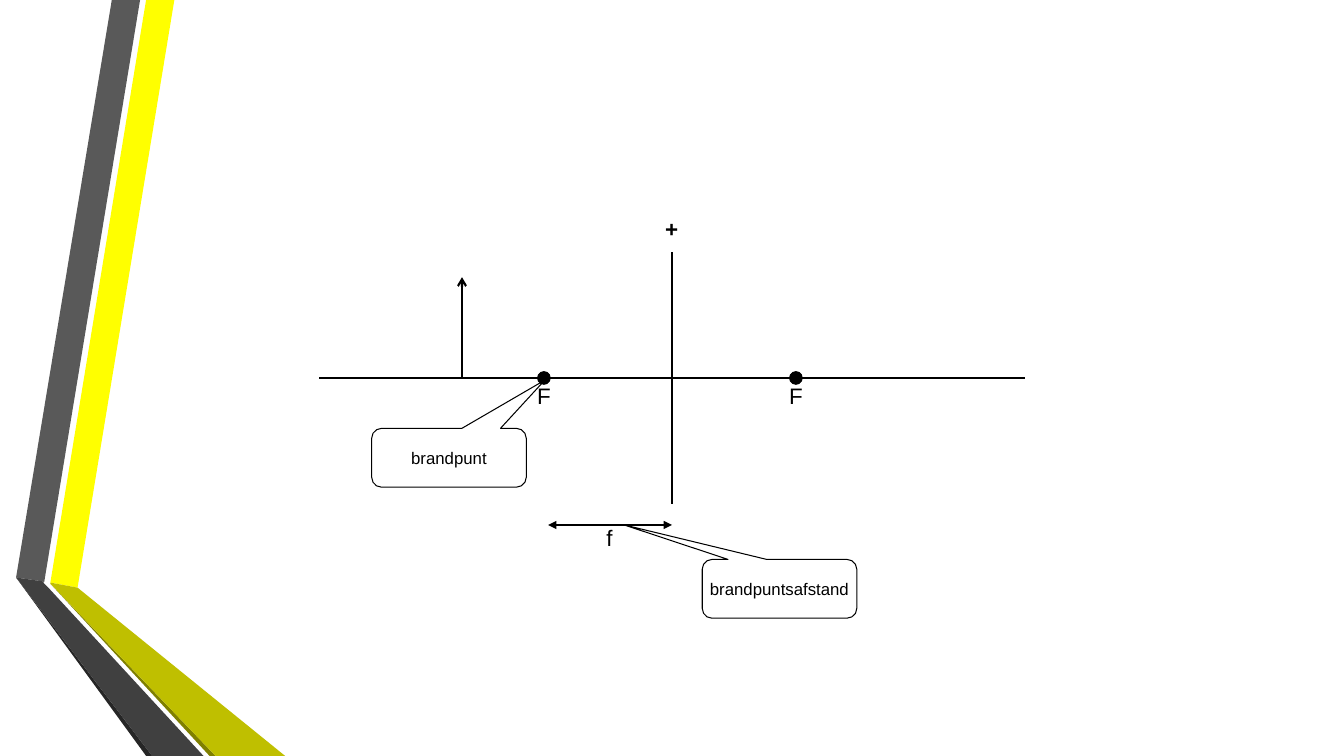
import pptx
import pptx.util
import pptx.dml.color
import pptx.enum.shapes
import pptx.enum.text
import pptx.oxml.ns
import lxml.etree

RGB = pptx.dml.color.RGBColor
BLACK = RGB(0x00, 0x00, 0x00)
YELLOW = RGB(0xFF, 0xFF, 0x00)
OLIVE = RGB(0xBF, 0xBF, 0x00)
MOSS = RGB(0x7F, 0x80, 0x00)
GREY = RGB(0x59, 0x59, 0x59)
DARK = RGB(0x40, 0x40, 0x40)
COAL = RGB(0x26, 0x26, 0x26)

KIND = pptx.enum.shapes.MSO_SHAPE
ANCHOR = pptx.enum.text.MSO_ANCHOR
ALIGN = pptx.enum.text.PP_ALIGN
SIZING = pptx.enum.text.MSO_AUTO_SIZE
LABEL = {"name": "Arial", "size": pptx.util.Pt(16), "bold": False}
NOTE = LABEL | {"size": pptx.util.Pt(12)}

WIDE, HIGH = pptx.util.Inches(13.333), pptx.util.Inches(7.5)
COLS, ROWS = 160, 90
CELL = HIGH / ROWS
POINT = HIGH / 750

BANDS = [
    (YELLOW, [(50, 578), (77, 583), (173, 0), (145, 0)]),
    (GREY, [(139, 0), (111, 0), (16, 573), (44, 577)]),
    (COAL, [(16, 573), (145, 750), (151, 750)]),
    (MOSS, [(50, 579), (208, 750), (214, 750)]),
    (OLIVE, [(50, 579), (214, 750), (283, 750), (77, 583), (50, 578)]),
    (DARK, [(202, 750), (48, 583), (43, 578), (44, 577), (16, 573), (151, 750)]),
]


def style(item, values):
    for name, value in values.items():
        setattr(item, name, value)


def place(box, x, y):
    return round((box[0] + x) * CELL), round((box[1] + y) * CELL)


def span(wide, high):
    return round(wide * CELL), round(high * CELL)


def write(shape, text, font, **frame):
    style(shape.text_frame, frame)
    para = shape.text_frame.paragraphs[0]
    run = para.add_run()
    run.text = text
    style(run.font, font)
    run.font.color.rgb = BLACK
    return para


def outline(item, width):
    item.line.color.rgb = BLACK
    item.line.width = pptx.util.Pt(width)


def ribbon(slide, left, top):
    for color, points in BANDS:
        spots = [(left + x, top + y) for x, y in points]
        form = slide.shapes.build_freeform(*spots[0], scale=POINT)
        form.add_line_segments(spots[1:], close=True)
        band = form.convert_to_shape()
        band.shadow.inherit = False
        band.fill.solid()
        band.fill.fore_color.rgb = color
        band.line.fill.background()


def line(slide, box, start, end, width, **heads):
    rule = slide.shapes.add_connector(
        pptx.enum.shapes.MSO_CONNECTOR.STRAIGHT,
        *place(box, *start), *place(box, *end))
    outline(rule, width)
    qn = pptx.oxml.ns.qn
    stroke = rule.line._get_or_add_ln()
    for side, kind in heads.items():
        lxml.etree.SubElement(stroke, qn("a:" + side), type=kind)
    lxml.etree.SubElement(rule._element.spPr, qn("a:effectLst"))


def label(slide, box, text, x, y, wide, **font):
    area = slide.shapes.add_textbox(*place(box, x, y), *span(wide, 4.44))
    write(area, text, LABEL | font, word_wrap=True,
          auto_size=SIZING.SHAPE_TO_FIT_TEXT)


def focus(slide, box, x, y):
    dot = slide.shapes.add_shape(
        KIND.OVAL, *place(box, x - 0.75, y - 0.75), *span(1.5, 1.5))
    dot.shadow.inherit = False
    dot.fill.solid()
    dot.fill.fore_color.rgb = BLACK
    outline(dot, 0.75)


def callout(slide, box, text, x, y, tip):
    note = slide.shapes.add_shape(
        KIND.ROUNDED_RECTANGULAR_CALLOUT, *place(box, x, y), *span(18.4, 7))
    note.shadow.inherit = False
    note.fill.background()
    outline(note, 0.75)
    note.adjustments[0], note.adjustments[1] = tip
    para = write(note, text, NOTE, word_wrap=False,
                 vertical_anchor=ANCHOR.MIDDLE)
    para.alignment = ALIGN.CENTER


def diagram(slide, box):
    wide = box[2]
    axis, lens, gap = 20, wide / 2, 15
    line(slide, box, (0, axis), (wide, axis), 1.5)
    line(slide, box, (lens, axis - gap), (lens, axis + gap), 0.75)
    label(slide, box, "+", lens - 2, 0, 4, bold=True)
    line(slide, box, (17, axis), (17, axis - 12), 1.5, tailEnd="arrow")
    for x in (lens - gap - 0.25, lens + gap - 0.25):
        focus(slide, box, x, axis)
        label(slide, box, "F", x - 2, axis - 0.05, 4.5)
    callout(slide, box, "brandpunt", 6.25, 26, (0.62, -1.32))
    line(slide, box, (27.25, 37.5), (lens, 37.5), 0.75,
         headEnd="triangle", tailEnd="triangle")
    label(slide, box, "f", 33, 36.8, 3.75)
    callout(slide, box, "brandpuntsafstand", 45.6, 41.6, (-1.01, -1.09))


def main():
    deck = pptx.Presentation()
    style(deck, {"slide_width": WIDE, "slide_height": HIGH})
    slide = deck.slides.add_slide(deck.slide_layouts[6])
    ribbon(slide, 0, 0)
    diagram(slide, (38, 25, COLS - 2 * 38, ROWS - 40))
    deck.save("out.pptx")


if __name__ == "__main__":
    main()
